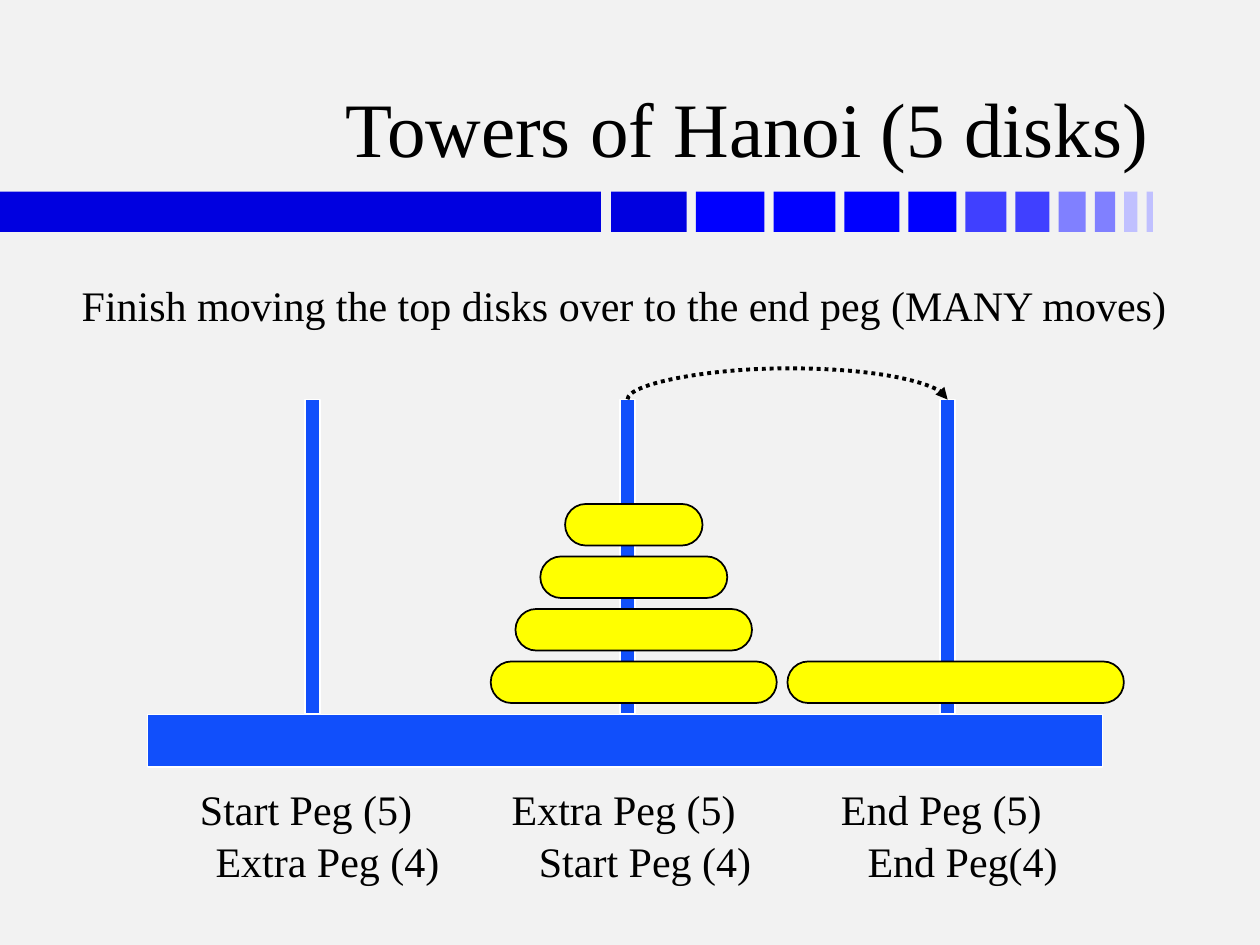
import pptx
import pptx.dml.color
import pptx.enum.dml
import pptx.enum.shapes
import pptx.enum.text
import pptx.oxml
import pptx.oxml.ns
import pptx.util

Inches = pptx.util.Inches
Shapes = pptx.enum.shapes.MSO_SHAPE
Align = pptx.enum.text.PP_ALIGN

PEG_LEFTS = [2.42, 4.92, 7.46]
PEG_TOP, PEG_WIDTH = 3.17, 0.12
BASE_TOP = 5.67
FONT = {"name": "Times New Roman", "bold": False}


def color(value):
    return pptx.dml.color.RGBColor.from_string(value)


def add_block(page, kind, box, fill, line=None):
    shape = page.shapes.add_shape(kind, *map(Inches, box))
    shape.shadow.inherit = False
    shape.fill.solid()
    shape.fill.fore_color.rgb = color(fill)
    if line:
        shape.line.color.rgb = color(line)
        shape.line.width = pptx.util.Pt(1)
    else:
        shape.line.fill.background()
    return shape


def write(frame, text, size, align):
    para = frame.paragraphs[0]
    para.alignment = align
    span = para.add_run()
    span.text = text
    for name, value in {**FONT, "size": pptx.util.Pt(size)}.items():
        setattr(span.font, name, value)
    span.font.color.rgb = color("000000")


def add_title(page, text):
    title = page.shapes.title
    place = {"left": 0.74, "top": 0.19, "width": 8.48, "height": 1.23}
    for name, value in place.items():
        setattr(title, name, Inches(value))
    title.text_frame.vertical_anchor = pptx.enum.text.MSO_ANCHOR.BOTTOM
    write(title.text_frame, text, 44, Align.RIGHT)


def add_label(page, text, box, align=Align.CENTER):
    label = page.shapes.add_textbox(*map(Inches, box))
    label.text_frame.word_wrap = False
    write(label.text_frame, text, 24, align)


def add_fading_bar(page):
    top, height, gap = 1.52, 0.32, 0.0725
    add_block(page, Shapes.RECTANGLE, (0, top, 4.77, height), "0000E0")
    fills = ["0000E0"] + ["0000FF"] * 4 + ["4040FF"] * 2 + ["8080FF"] * 2 + ["C0C0FF"] * 2
    left = 4.85
    for step, fill in enumerate(fills):
        width = 0.6 - 0.055 * step
        add_block(page, Shapes.RECTANGLE, (left, top, width, height), fill)
        left += width + gap


def add_disk(page, center, level, width):
    """Level 0 is the lowest disk on a peg."""
    top = 5.25 - level * 5 / 12
    disk = add_block(page, Shapes.ROUNDED_RECTANGLE,
                     (center - width / 2, top, width, 0.33), "FFFF00", "000000")
    disk.adjustments[0] = 0.5


def add_arc(page, start, end, top, rise):
    """Dotted curve between two points of equal height, bowed upward."""
    middle, half, thin = (start + end) / 2, (end - start) / 2, 0.002
    arc = page.shapes.add_connector(
        pptx.enum.shapes.MSO_CONNECTOR.CURVE,
        *map(Inches, (middle, top + half, middle + thin, top - half)))
    arc.rotation = 90
    arc.line.color.rgb = color("000000")
    arc.line.width = pptx.util.Pt(2.25)
    arc.line.dash_style = pptx.enum.dml.MSO_LINE.ROUND_DOT

    # Bow height, arrowhead and no shadow
    namespace = pptx.oxml.ns.nsdecls("a")
    properties = arc._element.spPr
    guides = properties.find(pptx.oxml.ns.qn("a:prstGeom")).get_or_add_avLst()
    guides.append(pptx.oxml.parse_xml(
        f'<a:gd {namespace} name="adj1" fmla="val {round(-rise / thin * 100000)}"/>'))
    arc.line._get_or_add_ln().append(
        pptx.oxml.parse_xml(f'<a:tailEnd {namespace} type="triangle"/>'))
    properties.append(pptx.oxml.parse_xml(f"<a:effectLst {namespace}/>"))


def main():
    deck = pptx.Presentation()
    deck.slide_width, deck.slide_height = Inches(10), Inches(7.5)
    page = deck.slides.add_slide(deck.slide_layouts[5])
    page.background.fill.solid()
    page.background.fill.fore_color.rgb = color("F2F2F2")

    add_fading_bar(page)
    add_title(page, "Towers of Hanoi (5 disks)")

    # Base and pegs
    add_block(page, Shapes.RECTANGLE, (1.17, BASE_TOP, 7.58, 0.42), "114FFB", "FFFFFF")
    for left in PEG_LEFTS:
        add_block(page, Shapes.RECTANGLE,
                  (left, PEG_TOP, PEG_WIDTH, BASE_TOP - PEG_TOP), "114FFB", "FFFFFF")

    # Largest disk on the end peg, the other four on the extra peg
    add_disk(page, 7.585, 0, 2.67)
    for level in range(4):
        add_disk(page, 5.03, level, 2.27 - 0.393 * level)

    start, end = (left + PEG_WIDTH / 2 for left in PEG_LEFTS[1:])
    add_arc(page, start, end, PEG_TOP, 0.25)

    # Instruction and peg roles, the second row slightly indented
    add_label(page, "Finish moving the top disks over to the end peg (MANY moves)",
              (0.55, 2.17, 8.89, 0.51), Align.LEFT)
    roles = [["Start Peg (5)", "Extra Peg (5)", "End Peg (5)"],
             ["Extra Peg (4)", "Start Peg (4)", "End Peg(4)"]]
    for row, names in enumerate(roles):
        for column, name in enumerate(names):
            left = 1.43 + 2.52 * column + 0.17 * row
            add_label(page, name, (left, 6.17 + 0.41 * row, 2, 0.5))

    deck.save("out.pptx")


if __name__ == "__main__":
    main()
